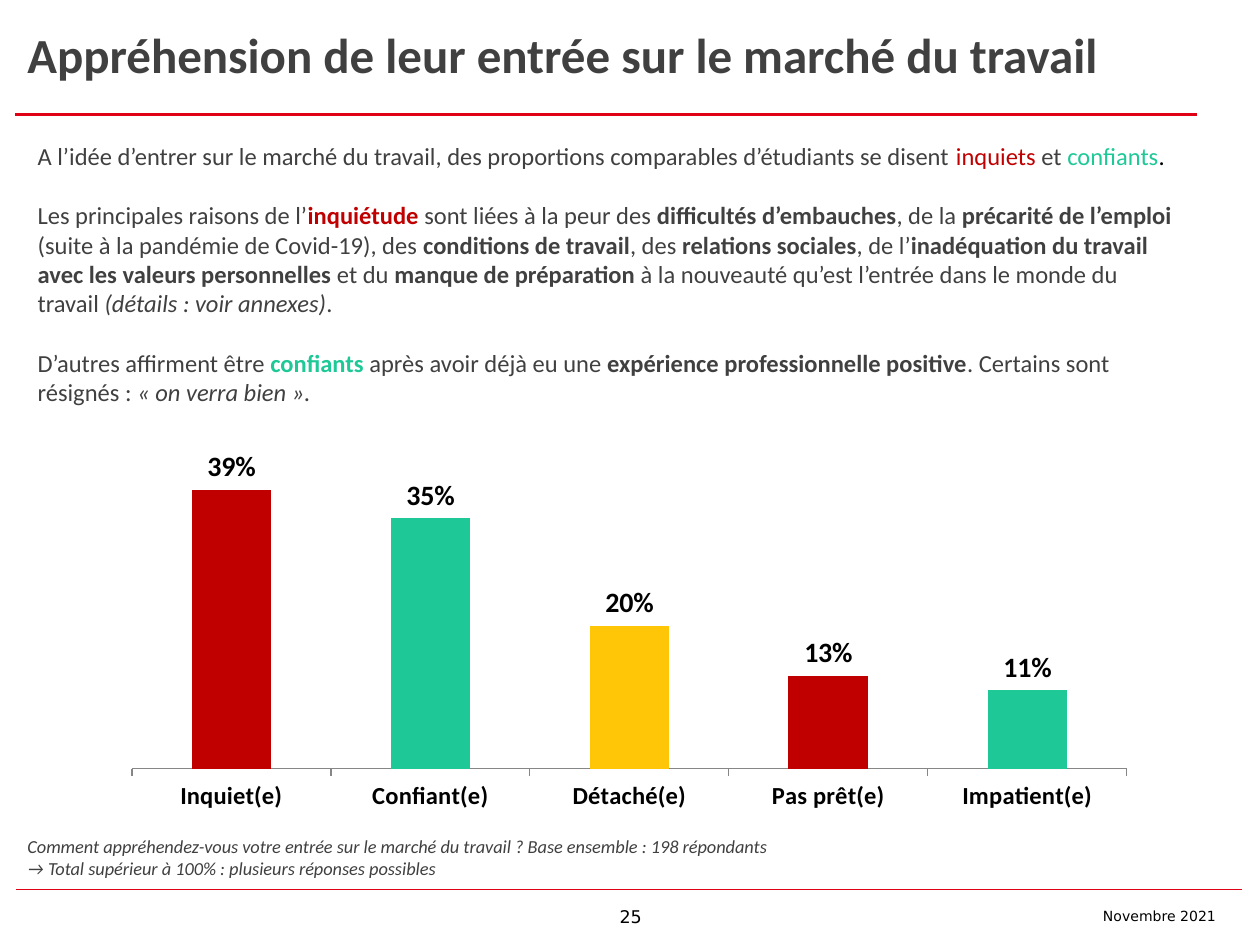
"""Build the slide on how students feel about entering the labour market."""
from lxml.etree import SubElement
from pptx import Presentation
from pptx.chart.data import CategoryChartData
from pptx.dml.color import RGBColor
from pptx.enum.chart import XL_CHART_TYPE, XL_LABEL_POSITION, XL_TICK_LABEL_POSITION, XL_TICK_MARK
from pptx.enum.shapes import MSO_CONNECTOR
from pptx.enum.text import MSO_ANCHOR, PP_ALIGN
from pptx.oxml import parse_xml
from pptx.oxml.ns import nsdecls, qn
from pptx.util import Pt

COLOURS = {
    "text": "404040",
    "black": "000000",
    "rule": "E00115",
    "worried": "C00000",
    "confident": "1EC897",
    "detached": "FFC507",
    "axis": "868686",
    "neutral": "BFBFBF",
}


def colour(name):
    return RGBColor.from_string(COLOURS[name])


def add_text(slide, box, paragraphs, size, font="Calibri", color="text", bold=False,
             italic=False, align=PP_ALIGN.LEFT, anchor=MSO_ANCHOR.TOP, gap=0):
    shape = slide.shapes.add_textbox(*[Pt(length) for length in box])
    frame = shape.text_frame
    frame.word_wrap = True
    frame.vertical_anchor = anchor
    for index, runs in enumerate(paragraphs):
        paragraph = frame.add_paragraph() if index else frame.paragraphs[0]
        paragraph.alignment = align
        if index:
            paragraph.space_before = Pt(gap)
        for text, style in runs:
            run = paragraph.add_run()
            run.text = text
            run.font.name = font
            run.font.size = Pt(size)
            run.font.bold = style.get("bold", bold)
            run.font.italic = style.get("italic", italic)
            run.font.color.rgb = colour(style.get("color", color))


PLAIN = {}
BOLD = {"bold": True}
ITALIC = {"italic": True}

presentation = Presentation()
presentation.slide_width = Pt(720)
presentation.slide_height = Pt(540)
slide = presentation.slides.add_slide(presentation.slide_layouts[6])

add_text(slide, (337.7, 514, 45.4, 19.4), [[("25", PLAIN)]], 10, font="DejaVu Sans",
         color="black", align=PP_ALIGN.CENTER)
add_text(slide, (509, 514.8, 193, 17.3), [[("Novembre 2021", PLAIN)]], 8, font="DejaVu Sans",
         color="black", align=PP_ALIGN.RIGHT)

for left, right, top, width in [(8.6, 684, 65.5, 2), (9.4, 710, 508.3, 0.5)]:
    rule = slide.shapes.add_connector(MSO_CONNECTOR.STRAIGHT, Pt(left), Pt(top), Pt(right), Pt(top))
    rule.line.color.rgb = colour("rule")
    rule.line.width = Pt(width)
    SubElement(rule._element.spPr, qn("a:effectLst"))

add_text(slide, (8.6, 3.6, 677.5, 54.7),
         [[("Appréhension de leur entrée sur le marché du travail", PLAIN)]],
         28, bold=True, anchor=MSO_ANCHOR.MIDDLE)
add_text(slide, (8.6, 473.8, 711, 32.4), [
    [("Comment appréhendez-vous votre entrée sur le marché du travail ? "
      "Base ensemble : 198 répondants", PLAIN)],
    [("→ Total supérieur à 100% : plusieurs réponses possibles", PLAIN)],
], 10.5, italic=True)

answers = [
    ("Inquiet(e)", 0.39, "worried"),
    ("Confiant(e)", 0.35, "confident"),
    ("Détaché(e)", 0.2, "detached"),
    ("Pas prêt(e)", 0.13, "worried"),
    ("Impatient(e)", 0.11, "confident"),
]
chart_data = CategoryChartData(number_format="0%")
chart_data.categories = [answer for answer, share, fill in answers]
chart_data.add_series("Series 1", [share for answer, share, fill in answers])
chart = slide.shapes.add_chart(XL_CHART_TYPE.COLUMN_CLUSTERED, Pt(25.2), Pt(213.1),
                               Pt(668.9), Pt(301.7), chart_data).chart
chart.has_legend = False
chart.has_title = False
chart.font.name = "Calibri"
chart.font.size = Pt(18)
chart.font.color.rgb = colour("black")

category_axis = chart.category_axis
category_axis.major_tick_mark = XL_TICK_MARK.OUTSIDE
category_axis.tick_label_position = XL_TICK_LABEL_POSITION.LOW
category_axis.tick_labels.font.size = Pt(14)
category_axis.tick_labels.font.bold = True
category_axis.format.line.color.rgb = colour("axis")
category_axis.format.line.width = Pt(0.75)
value_axis = chart.value_axis
value_axis.minimum_scale = 0
value_axis.maximum_scale = 0.45
value_axis.has_major_gridlines = False
value_axis.visible = False

plot = chart.plots[0]
plot.gap_width = 150
plot.vary_by_categories = False
plot.has_data_labels = True
labels = plot.data_labels
labels.show_value = True
labels.position = XL_LABEL_POSITION.OUTSIDE_END
labels.number_format = "0%"
labels.number_format_is_linked = False
labels.font.size = Pt(16)
labels.font.bold = True
series = plot.series[0]
series.format.fill.solid()
series.format.fill.fore_color.rgb = colour("neutral")
for index, (answer, share, fill) in enumerate(answers):
    point_fill = series.points[index].format.fill
    point_fill.solid()
    point_fill.fore_color.rgb = colour(fill)

plot_area = chart._chartSpace.chart.plotArea
for layout in plot_area.findall(qn("c:layout")):
    plot_area.remove(layout)
plot_area.insert(0, parse_xml(
    f'<c:layout {nsdecls("c")}><c:manualLayout><c:layoutTarget val="inner"/>'
    '<c:xMode val="edge"/><c:yMode val="edge"/><c:x val="0.075"/><c:y val="0.14"/>'
    '<c:w val="0.85"/><c:h val="0.61"/></c:manualLayout></c:layout>'))

add_text(slide, (14.4, 77, 668.9, 159.8), [
    [
        ("A l’idée d’entrer sur le marché du travail, des proportions comparables "
         "d’étudiants se disent ", PLAIN),
        ("inquiets", {"color": "worried"}),
        (" et ", PLAIN),
        ("confiants", {"color": "confident"}),
        (".", {"color": "black"}),
    ],
    [
        ("Les principales raisons de l’", PLAIN),
        ("inquiétude ", {"color": "worried", "bold": True}),
        ("sont liées à la peur des ", PLAIN),
        ("difficultés d’embauches", BOLD),
        (", de la ", PLAIN),
        ("précarité de l’emploi ", BOLD),
        ("(suite à la pandémie de Covid-19), des ", PLAIN),
        ("conditions de travail", BOLD),
        (", des ", PLAIN),
        ("relations sociales", BOLD),
        (", de l’", PLAIN),
        ("inadéquation du travail avec les valeurs personnelles", BOLD),
        (" et du ", PLAIN),
        ("manque de préparation ", BOLD),
        ("à la nouveauté qu’est l’entrée dans le monde du travail ", PLAIN),
        ("(détails : voir annexes)", ITALIC),
        (".", PLAIN),
    ],
    [
        ("D’autres affirment être ", PLAIN),
        ("confiants ", {"color": "confident", "bold": True}),
        ("après avoir déjà eu une ", PLAIN),
        ("expérience professionnelle positive", BOLD),
        (". Certains sont résignés : ", PLAIN),
        ("« on verra bien ».", ITALIC),
    ],
], 14, gap=17)

presentation.save("out.pptx")
